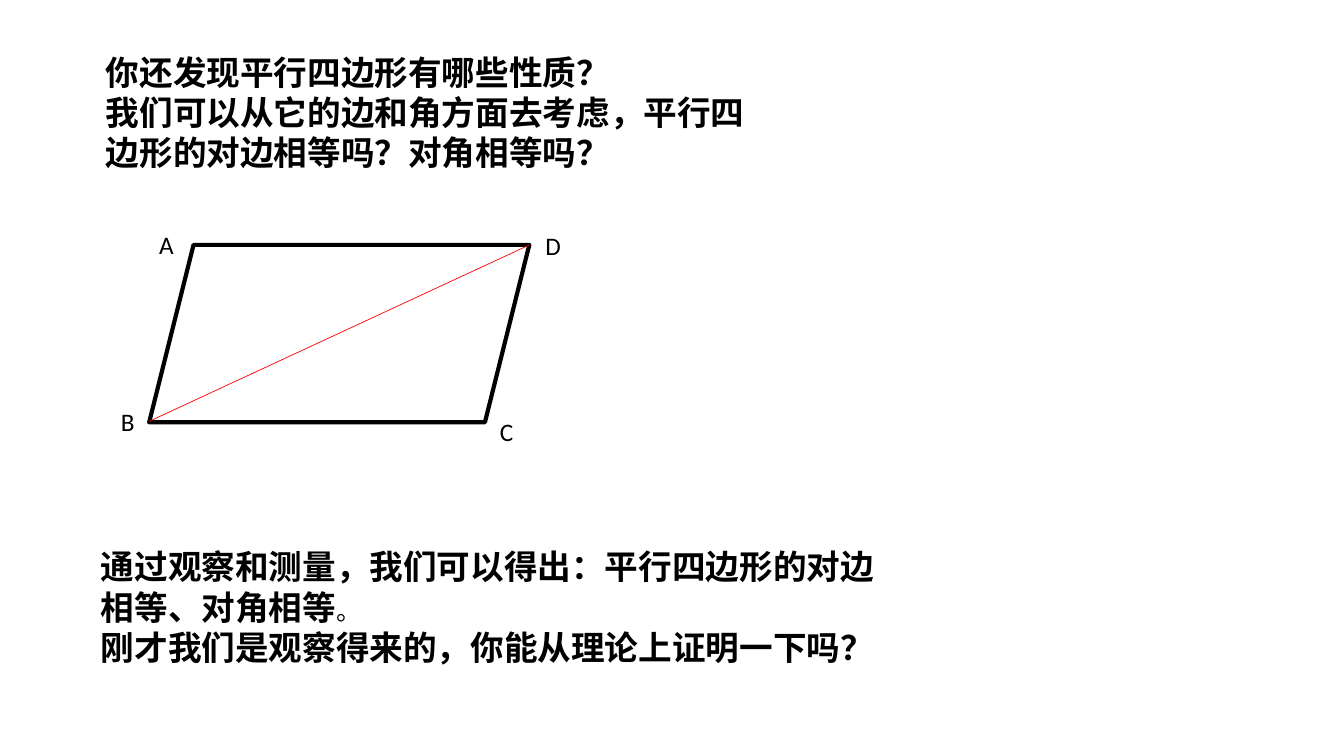
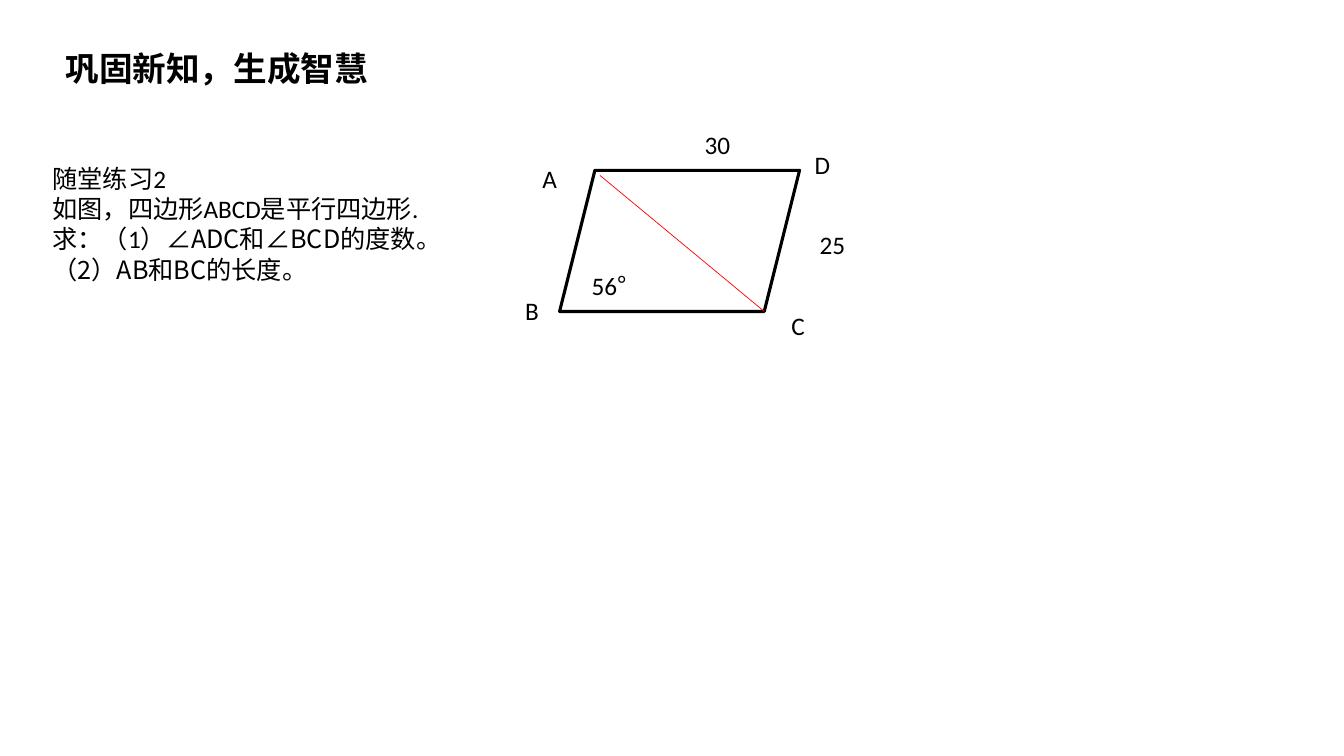
"""Build two lesson slides on the properties of parallelograms."""
from dataclasses import dataclass
from typing import NamedTuple

from lxml import etree
from pptx import Presentation
from pptx import util as u
from pptx.dml.color import RGBColor
from pptx.enum import shapes, text
from pptx.oxml.ns import qn


@dataclass(frozen=True)
class Theme:
    ink: RGBColor = RGBColor(0, 0, 0)
    paper: RGBColor = RGBColor(255, 255, 255)
    accent: RGBColor = RGBColor(255, 0, 0)
    latin: str = "Calibri"
    cjk: str = "Noto Sans CJK SC"
    heading: int = 24
    body: int = 18
    leading: float = 1.2
    diagonal: float = 0.5


THEME = Theme()


class Run(NamedTuple):
    text: str
    size: int = THEME.body
    bold: bool = False
    font: str = THEME.latin


class Box(NamedTuple):
    left: float
    top: float
    width: float
    height: float


class Label(NamedTuple):
    box: Box
    runs: list[Run]


class Figure(NamedTuple):
    box: Box
    weight: float
    start: tuple[float, float]
    end: tuple[float, float]
    labels: list[Label]


def heading(content: str) -> Run:
    return Run(content, THEME.heading, True)


def label(name: str, *box: float) -> Label:
    return Label(Box(*box), [Run(name)])


def place(sp, box: Box) -> None:
    sp.left, sp.top, sp.width, sp.height = map(u.Inches, box)


def write(sp, paragraphs: list[list[Run]]) -> None:
    tf = sp.text_frame
    tf.word_wrap = True
    tf.auto_size = text.MSO_AUTO_SIZE.SHAPE_TO_FIT_TEXT
    tf.vertical_anchor = text.MSO_ANCHOR.TOP
    for i, runs in enumerate(paragraphs):
        p = tf.add_paragraph() if i else tf.paragraphs[0]
        p.alignment = text.PP_ALIGN.LEFT
        p.space_before = u.Pt(0)
        p.line_spacing = u.Pt(THEME.leading * max(run.size for run in runs))
        pPr = p._p.get_or_add_pPr()
        pPr.set("marL", "0")
        pPr.set("indent", "0")
        etree.SubElement(pPr, qn("a:buNone"))
        for run in runs:
            r = p.add_run()
            r.text = run.text
            r.font.name = run.font
            r.font.size = u.Pt(run.size)
            r.font.bold = run.bold
            r.font.color.rgb = THEME.ink
            ea = etree.SubElement(r.font._element, qn("a:ea"))
            ea.set("typeface", THEME.cjk)


def draw_figure(slide, figure: Figure) -> None:
    sp = slide.shapes.add_shape(
        shapes.MSO_SHAPE.PARALLELOGRAM, *map(u.Inches, figure.box))
    sp.shadow.inherit = False
    sp.fill.solid()
    sp.fill.fore_color.rgb = THEME.paper
    sp.line.color.rgb = THEME.ink
    sp.line.width = u.Pt(figure.weight)

    line = slide.shapes.add_connector(
        shapes.MSO_CONNECTOR.STRAIGHT,
        *map(u.Inches, figure.start + figure.end))
    line.line.color.rgb = THEME.accent
    line.line.width = u.Pt(THEME.diagonal)
    etree.SubElement(line._element.spPr, qn("a:effectLst"))

    for item in figure.labels:
        write(slide.shapes.add_textbox(*map(u.Inches, item.box)), [item.runs])


def add_lesson(prs, title_box: Box, title: list[list[Run]],
               body_box: Box, body: list[list[Run]], figure: Figure) -> None:
    slide = prs.slides.add_slide(prs.slide_layouts[1])
    blocks = ((slide.shapes.title, title_box, title),
              (slide.placeholders[1], body_box, body))
    for sp, box, paragraphs in blocks:
        place(sp, box)
        write(sp, paragraphs)
    draw_figure(slide, figure)


def main() -> None:
    prs = Presentation()
    prs.slide_width, prs.slide_height = u.Inches(13.33), u.Inches(7.5)

    add_lesson(
        prs,
        Box(0.95, 0.46, 6.76, 1.31),
        [[heading("你还发现平行四边形有哪些性质？")],
         [heading("我们可以从它的边和角方面去考虑，平行四边形的对边相等吗？对角相等吗？")]],
        Box(0.9, 5.37, 8.04, 1.31),
        [[heading("通过观察和测量，我们可以得出：平行四边形的对边相等、对角相等"), Run("。")],
         [heading("刚才我们是观察得来的，你能从理论上证明一下吗？")]],
        Figure(Box(1.48, 2.43, 3.77, 1.76), 3, (1.48, 4.18), (5.25, 2.43), [
            label("A", 1.48, 2.23, 0.27, 0.4),
            label("B", 1.1, 3.98, 0.51, 0.4),
            label("C", 4.86, 4.08, 0.55, 0.4),
            label("D", 5.31, 2.24, 0.71, 0.4),
        ]))

    add_lesson(
        prs,
        Box(0.55, 0.43, 6.91, 0.5),
        [[heading("巩固新知，生成智慧")]],
        Box(0.42, 1.57, 5.91, 1.31),
        [[Run("随堂练习2")],
         [Run("如图，四边形ABCD是平行四边形.")],
         [Run("求：（1）"), Run("∠ADC和∠BCD的度数。", font=THEME.cjk)],
         [Run("（2）AB和BC的长度。", font=THEME.cjk)]],
        Figure(Box(5.55, 1.69, 2.38, 1.4), 2.25, (5.95, 1.74), (7.58, 3.09), [
            label("A", 5.28, 1.57, 0.49, 0.4),
            label("B", 5.11, 2.88, 0.4, 0.4),
            label("C", 7.75, 3.03, 0.82, 0.4),
            label("D", 7.98, 1.43, 0.62, 0.4),
            label("30", 6.89, 1.23, 0.57, 0.4),
            label("25", 8.03, 2.23, 0.66, 0.4),
            Label(Box(5.77, 2.63, 1, 0.4), [Run("56"), Run("°", font=THEME.cjk)]),
        ]))

    prs.save("out.pptx")


if __name__ == "__main__":
    main()
